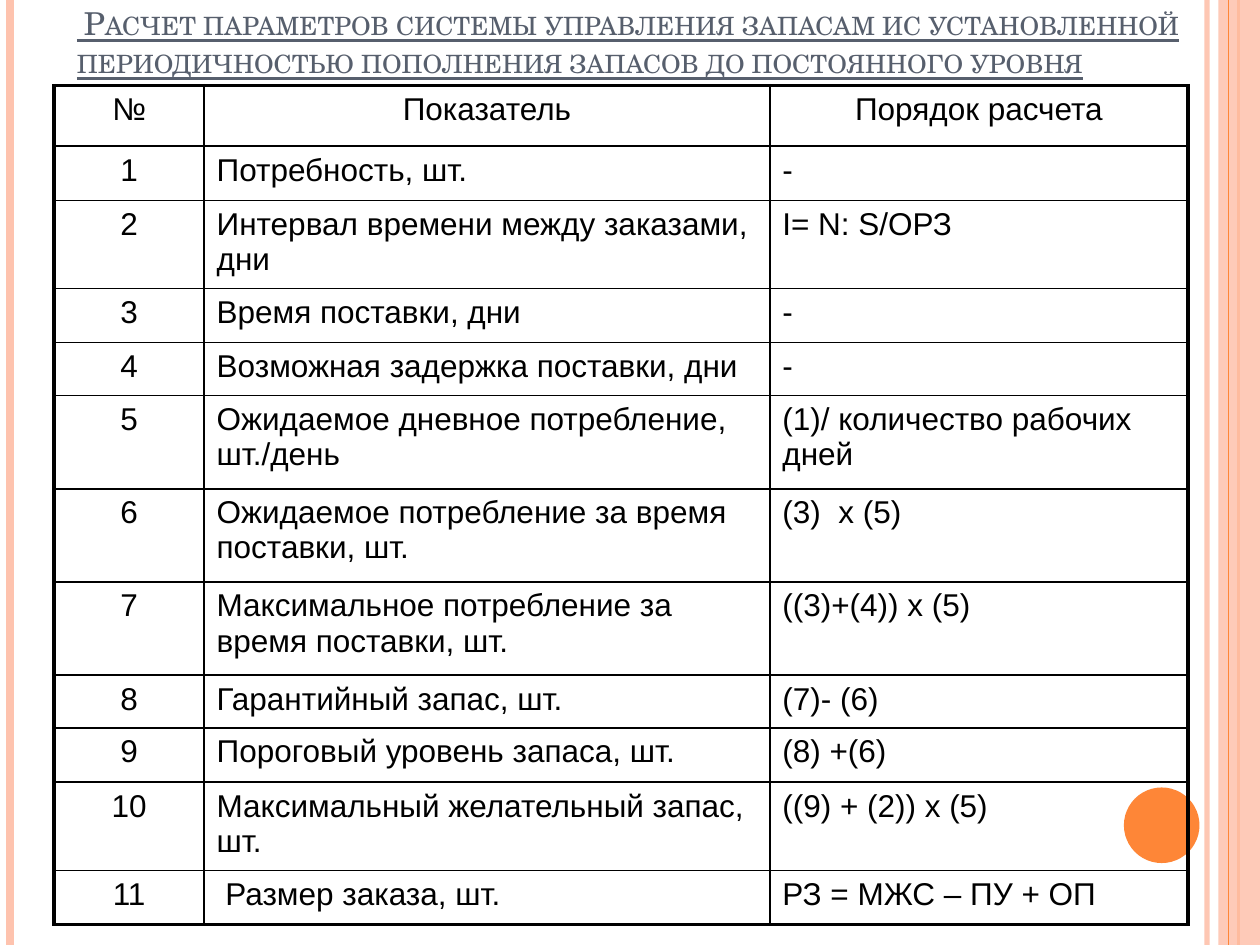
"""Build a slide with a table of stock control parameters."""
from typing import NamedTuple

from lxml.etree import SubElement
from pptx import Presentation
from pptx.dml.color import RGBColor as Rgb
from pptx.enum.shapes import MSO_CONNECTOR as Conn, MSO_SHAPE as Kind
from pptx.enum.text import MSO_ANCHOR as Anchor, MSO_AUTO_SIZE as Auto, PP_ALIGN as Align
from pptx.oxml import parse_xml
from pptx.oxml.ns import nsdecls, qn
from pptx.util import Inches, Pt

INK = {"peach": "FEC3AE", "orange": "FE8637", "slate": "575F6D", "black": "000000"}


class Stripe(NamedTuple):
    x: float
    ink: str
    width: float
    alpha: int = 100


class Blob(NamedTuple):
    kind: Kind
    box: tuple
    ink: str
    alpha: int = 100


class Row(NamedTuple):
    high: float
    num: str
    name: str
    rule: str


LEFT = [Stripe(9.58, "peach", 3, 93), Stripe(0.08, "peach", 4.5),
        Stripe(9.83, "orange", 1.5)]
BAND = Blob(Kind.RECTANGLE, (9.67, 0, 0.33, 7.5), "peach", 87)
THIN = Stripe(9.75, "orange", 0.75)
DOT = Blob(Kind.OVAL, (8.92, 6.25, 0.6, 0.6), "orange")
TITLE = (" Расчет параметров системы управления запасам ис установленной "
         "периодичностью пополнения запасов до постоянного уровня")
COLS = [1.19, 4.49, 3.32]
ROWS = [
    Row(0.48, "№", "Показатель", "Порядок расчета"),
    Row(0.43, "1", "Потребность, шт.", "-"),
    Row(0.7, "2", "Интервал времени между заказами, дни", "I= N: S/ОРЗ"),
    Row(0.43, "3", "Время поставки, дни", "-"),
    Row(0.42, "4", "Возможная задержка поставки, дни", "-"),
    Row(0.74, "5", "Ожидаемое дневное потребление, шт./день",
        "(1)/ количество рабочих дней"),
    Row(0.74, "6", "Ожидаемое потребление за время поставки, шт.", "(3)  х (5)"),
    Row(0.74, "7", "Максимальное потребление за время поставки, шт.", "((3)+(4)) х (5)"),
    Row(0.42, "8", "Гарантийный запас, шт.", "(7)- (6)"),
    Row(0.43, "9", "Пороговый уровень запаса, шт.", "(8) +(6)"),
    Row(0.7, "10", "Максимальный желательный запас, шт.", "((9) + (2)) х (5)"),
    Row(0.43, "11", " Размер заказа, шт.", "РЗ = МЖС – ПУ + ОП"),
]


def fade(part, alpha: int) -> None:
    """Set the opacity of the solid colour inside an element."""
    if alpha < 100:
        tint = next(part.iter(qn("a:srgbClr")))
        SubElement(tint, qn("a:alpha"), val=str(alpha * 1000))


def write(frame, text: str, *, font: str = "Arial", size: float = 18,
          ink: str = "black", align=Align.LEFT, under: bool = False,
          small: bool = False) -> None:
    """Put one formatted run into a text frame."""
    para = frame.paragraphs[0]
    para.alignment = align
    run = para.add_run()
    run.text = text
    face = run.font
    face.name, face.size, face.bold = font, Pt(size), False
    face.color.rgb = Rgb.from_string(INK[ink])
    if under:
        face.underline = True
    if small:
        face._element.set("cap", "small")


def draw_stripe(slide, item: Stripe) -> None:
    """Draw a line down the full height of the slide."""
    x = Inches(item.x)
    line = slide.shapes.add_connector(Conn.STRAIGHT, x, 0, x, Inches(7.5))
    line.line.color.rgb = Rgb.from_string(INK[item.ink])
    line.line.width = Pt(item.width)
    props = line._element.spPr
    fade(props, item.alpha)
    SubElement(props, qn("a:effectLst"))


def draw_blob(slide, item: Blob) -> None:
    """Draw a filled shape without outline."""
    shape = slide.shapes.add_shape(item.kind, *map(Inches, item.box))
    shape.shadow.inherit = False
    shape.fill.solid()
    shape.fill.fore_color.rgb = Rgb.from_string(INK[item.ink])
    shape.line.fill.background()
    fade(shape._element.spPr, item.alpha)


def draw_edges(cell, row: int, col: int) -> None:
    """Give a cell thick outer and thin inner borders."""
    outer = {"L": col == 0, "R": col == len(COLS) - 1,
             "T": row == 0, "B": row == len(ROWS) - 1}
    props = cell._tc.get_or_add_tcPr()
    for spot, (side, thick) in enumerate(outer.items()):
        width = Pt(2.25 if thick else 1)
        props.insert(spot, parse_xml(
            f'<a:ln{side} {nsdecls("a")} w="{width}"><a:solidFill>'
            f'<a:srgbClr val="{INK["black"]}"/></a:solidFill></a:ln{side}>'))


def draw_title(slide) -> None:
    """Place and fill the title."""
    title = slide.shapes.title
    title.left, title.top, title.width, title.height = map(Inches, (0.51, 0.03, 9, 0.65))
    frame = title.text_frame
    frame.auto_size, frame.word_wrap = Auto.NONE, True
    frame.vertical_anchor = Anchor.BOTTOM
    write(frame, TITLE, font="TeX Gyre Schola", ink="slate", under=True, small=True)


def draw_table(slide) -> None:
    """Build the table of indicators."""
    high = sum(row.high for row in ROWS)
    box = map(Inches, (0.43, 0.68, sum(COLS), high))
    table = slide.shapes.add_table(len(ROWS), len(COLS), *box).table
    table.first_row = table.horz_banding = False
    for col, width in zip(table.columns, COLS):
        col.width = Inches(width)
    for r, row in enumerate(ROWS):
        table.rows[r].height = Inches(row.high)
        for c, text in enumerate(row[1:]):
            cell = table.cell(r, c)
            cell.fill.background()
            draw_edges(cell, r, c)
            mid = r == 0 or c == 0
            write(cell.text_frame, text, align=Align.CENTER if mid else Align.LEFT)


def main() -> None:
    """Create and save the slide."""
    deck = Presentation()
    deck.slide_width, deck.slide_height = Inches(10), Inches(7.5)
    slide = deck.slides.add_slide(deck.slide_layouts[5])
    for item in LEFT:
        draw_stripe(slide, item)
    draw_blob(slide, BAND)
    draw_stripe(slide, THIN)
    draw_blob(slide, DOT)
    draw_title(slide)
    draw_table(slide)
    deck.save("out.pptx")


if __name__ == "__main__":
    main()
